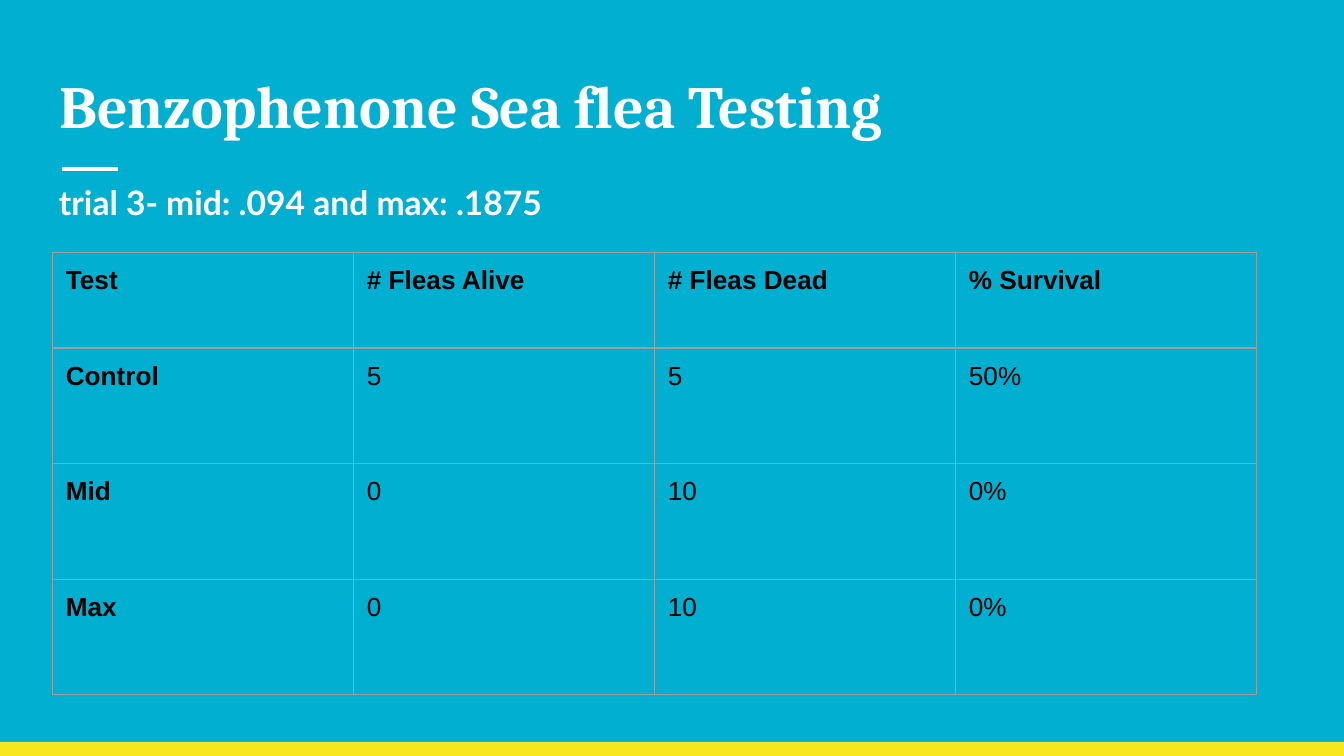
from dataclasses import dataclass

from lxml import etree
from pptx import Presentation
from pptx import util as u
from pptx.dml.color import RGBColor
from pptx.enum import shapes, text
from pptx.oxml import ns

HUES = {
    "sea": "01AFD1",
    "band": "F8E71C",
    "white": "FFFFFF",
    "ink": "000000",
    "grid": "9E9E9E",
}
PAD = u.Inches(0.1)


@dataclass
class Font:
    name: str
    size: float
    hue: str
    bold: bool = True


@dataclass
class Box:
    left: float
    top: float
    width: float
    height: float

    def emu(self) -> list[int]:
        return [u.Inches(n) for n in (self.left, self.top, self.width, self.height)]


ROWS = [
    ("Test", "# Fleas Alive", "# Fleas Dead", "% Survival"),
    ("Control", "5", "5", "50%"),
    ("Mid", "0", "10", "0%"),
    ("Max", "0", "10", "0%"),
]
COL = 2.24
HEAD, ROW = 0.71, 0.86


def color(hue: str) -> RGBColor:
    return RGBColor.from_string(HUES[hue])


def style(frame, font: Font) -> None:
    for par in frame.paragraphs:
        par.alignment = text.PP_ALIGN.LEFT
        for run in par.runs:
            run.font.name = font.name
            run.font.size = u.Pt(font.size)
            run.font.bold = font.bold
            run.font.color.rgb = color(font.hue)


def write(shape, box: Box, words: str, font: Font) -> None:
    shape.left, shape.top, shape.width, shape.height = box.emu()
    frame = shape.text_frame
    frame.text = words
    frame.word_wrap = True
    frame.auto_size = text.MSO_AUTO_SIZE.NONE
    frame.vertical_anchor = text.MSO_ANCHOR.TOP
    frame.margin_left = frame.margin_right = PAD
    frame.margin_top = frame.margin_bottom = PAD
    style(frame, font)


def edge(cell) -> None:
    props = cell._tc.get_or_add_tcPr()
    for i, side in enumerate(("lnL", "lnR", "lnT", "lnB")):
        line = etree.Element(ns.qn(f"a:{side}"), w=str(u.Pt(0.75)))
        fill = etree.SubElement(line, ns.qn("a:solidFill"))
        etree.SubElement(fill, ns.qn("a:srgbClr"), val=HUES["grid"])
        props.insert(i, line)


def grid(slide, left: float, top: float) -> None:
    rows, cols = len(ROWS), len(ROWS[0])
    box = Box(left, top, COL * cols, HEAD + ROW * (rows - 1))
    table = slide.shapes.add_table(rows, cols, *box.emu()).table
    table.first_row = table.horz_banding = False
    for col in table.columns:
        col.width = u.Inches(COL)
    for r, row in enumerate(ROWS):
        table.rows[r].height = u.Inches(ROW if r else HEAD)
        for c, words in enumerate(row):
            cell = table.cell(r, c)
            cell.text = words
            cell.margin_left = cell.margin_right = PAD
            cell.margin_top = cell.margin_bottom = PAD
            cell.fill.background()
            edge(cell)
            style(cell.text_frame, Font("Arial", 14, "ink", r == 0 or c == 0))


def main() -> None:
    # Widescreen slide, 16 by 9
    deck = Presentation()
    deck.slide_width = u.Inches(10)
    deck.slide_height = u.Inches(10 * 9 / 16)
    slide = deck.slides.add_slide(deck.slide_layouts[5])
    slide.background.fill.solid()
    slide.background.fill.fore_color.rgb = color("sea")

    # Bottom band
    band = slide.shapes.add_shape(
        shapes.MSO_SHAPE.RECTANGLE, *Box(0, 5.52, 10, 0.11).emu()
    )
    band.shadow.inherit = False
    band.fill.solid()
    band.fill.fore_color.rgb = color("band")
    band.line.fill.background()

    # Short rule under the title
    y = u.Inches(1.26)
    rule = slide.shapes.add_connector(
        shapes.MSO_CONNECTOR.STRAIGHT, u.Inches(0.46), y, u.Inches(0.88), y
    )
    rule.line.color.rgb = color("white")
    rule.line.width = u.Pt(2.25)
    etree.SubElement(rule._element.spPr, ns.qn("a:effectLst"))

    # Title and subtitle
    write(slide.shapes.title, Box(0.34, 0.41, 9.32, 0.71),
          "Benzophenone Sea flea Testing", Font("Cambria", 32, "white"))
    box = Box(0.34, 1.21, 9.32, 3.79)
    note = slide.shapes.add_textbox(*box.emu())
    write(note, box, "trial 3- mid: .094 and max: .1875", Font("Lato", 18, "white"))
    par = note.text_frame.paragraphs[0]
    par.line_spacing = 1.15
    par.space_after = u.Pt(16)

    # Results
    grid(slide, 0.39, 1.88)
    deck.save("out.pptx")


if __name__ == "__main__":
    main()
